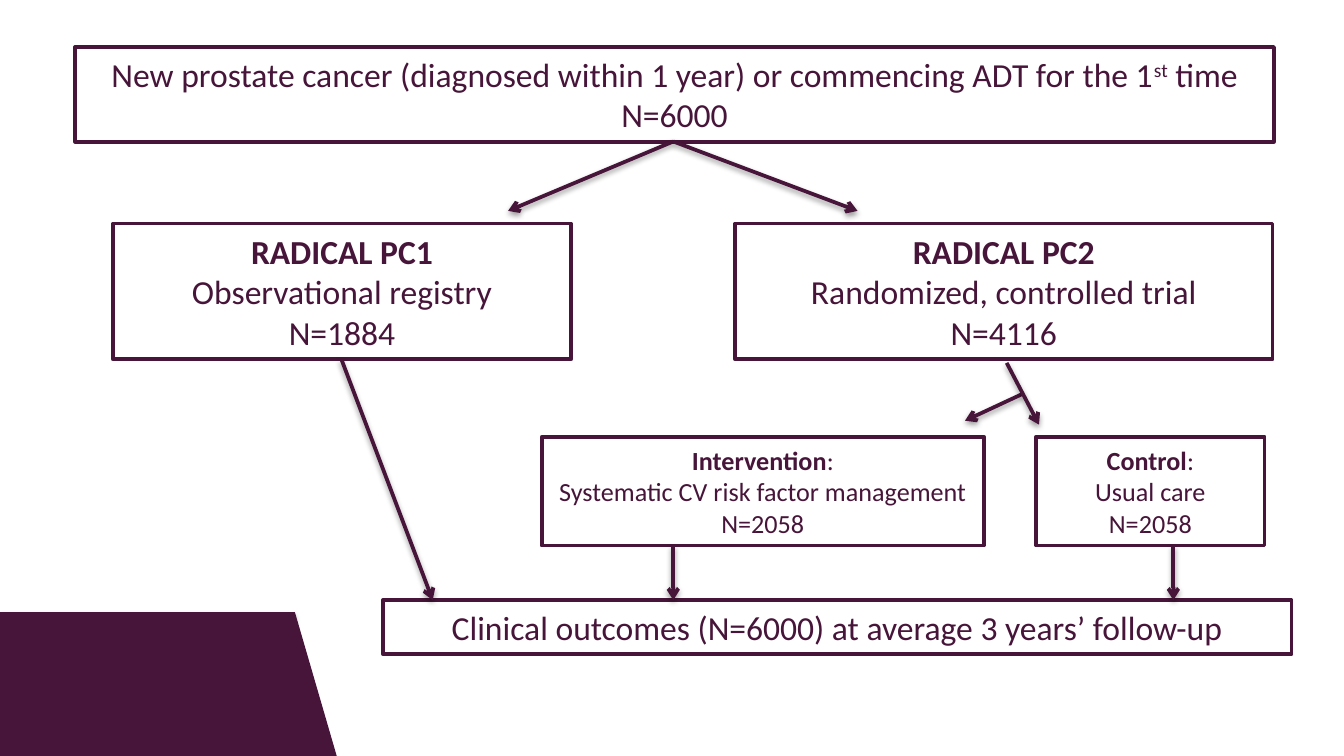
from dataclasses import dataclass

from lxml import etree
from pptx import Presentation
from pptx import util as u
from pptx.dml.color import RGBColor
from pptx.enum import shapes, text
from pptx.oxml import ns

PLUM = RGBColor(0x47, 0x15, 0x39)
WHITE = RGBColor(0xFF, 0xFF, 0xFF)
FONT = "Calibri"


@dataclass
class Run:
    text: str
    bold: bool = False
    raised: bool = False


@dataclass
class Box:
    left: float
    top: float
    width: float
    height: float
    size: int
    lines: list[list[Run]]


@dataclass
class Arrow:
    x1: float
    y1: float
    x2: float
    y2: float


def add_shade(shape, dist: float, alpha: int) -> None:
    """Give a shape a soft shadow that falls straight down."""
    props = shape._element.spPr
    for old in props.findall(ns.qn("a:effectLst")):
        props.remove(old)
    effects = etree.SubElement(props, ns.qn("a:effectLst"))
    shade = etree.SubElement(
        effects, ns.qn("a:outerShdw"), blurRad=str(u.Pt(3.1)),
        dist=str(u.Pt(dist)), dir="5400000", rotWithShape="0")
    black = etree.SubElement(shade, ns.qn("a:srgbClr"), val="000000")
    etree.SubElement(black, ns.qn("a:alpha"), val=str(alpha * 1000))


def add_block(slide, kind, left: float, top: float, width: float,
              height: float, fill: RGBColor, weight: float):
    block = slide.shapes.add_shape(
        kind, u.Pt(left), u.Pt(top), u.Pt(width), u.Pt(height))
    block.shadow.inherit = False
    block.fill.solid()
    block.fill.fore_color.rgb = fill
    block.line.color.rgb = PLUM
    block.line.width = u.Pt(weight)
    return block


def add_box(slide, box: Box) -> None:
    block = add_block(slide, shapes.MSO_SHAPE.RECTANGLE, box.left, box.top,
                      box.width, box.height, WHITE, 2)
    frame = block.text_frame
    frame.word_wrap = True
    frame.vertical_anchor = text.MSO_ANCHOR.MIDDLE
    for i, line in enumerate(box.lines):
        para = frame.paragraphs[0] if i == 0 else frame.add_paragraph()
        para.alignment = text.PP_ALIGN.CENTER
        for part in line:
            run = para.add_run()
            run.text = part.text
            run.font.name = FONT
            run.font.size = u.Pt(box.size)
            run.font.bold = part.bold
            run.font.color.rgb = PLUM
            if part.raised:
                run.font._element.set("baseline", "30000")


def add_arrow(slide, arrow: Arrow) -> None:
    line = slide.shapes.add_connector(
        shapes.MSO_CONNECTOR.STRAIGHT, u.Pt(arrow.x1), u.Pt(arrow.y1),
        u.Pt(arrow.x2), u.Pt(arrow.y2))
    line.line.color.rgb = PLUM
    line.line.width = u.Pt(2)
    etree.SubElement(line.line._get_or_add_ln(), ns.qn("a:tailEnd"),
                     type="arrow")
    add_shade(line, 1.6, 38)


def arm(name: str, mark: str, about: str, count: str) -> list[list[Run]]:
    """Bold name, then what the group is, then its size."""
    head = [Run(name, bold=True)]
    if mark:
        head.append(Run(mark))
    return [head, [Run(about)], [Run(count)]]


# Rows and centre lines shared by boxes and arrows
START_X, START_Y = 360.7, 75.8
GROUP_Y, GROUP_H = 119.8, 72.7
ARM_Y, ARM_H = 234, 58.3
END_Y = 321.5

BOXES = [
    Box(40.3, 25.2, 642.2, 50.8, 18, [
        [Run("New prostate cancer (diagnosed within 1 year) or commencing "
             "ADT for the 1"), Run("st", raised=True), Run(" time")],
        [Run("N=6000")]]),
    Box(60.5, GROUP_Y, 245.5, GROUP_H, 18,
        arm("RADICAL PC1", "", "Observational registry", "N=1884")),
    Box(393.8, GROUP_Y, 288, GROUP_H, 18,
        arm("RADICAL PC2", "", "Randomized, controlled trial", "N=4116")),
    Box(290.2, ARM_Y, 236.9, ARM_H, 14,
        arm("Intervention", ":", "Systematic CV risk factor management",
            "N=2058")),
    Box(555.1, ARM_Y, 122.4, ARM_H, 14,
        arm("Control", ":", "Usual care", "N=2058")),
    Box(205.2, END_Y, 486.7, 29, 18, [
        [Run("Clinical outcomes (N=6000) at average 3 years’ follow-up")]]),
]

ARROWS = [
    *[Arrow(START_X, START_Y, x, 113) for x in (272.2, 459.4)],
    Arrow(182.9, GROUP_Y + GROUP_H, 231.8, END_Y),
    Arrow(547.9, 211, 517, 225.4),
    Arrow(539.3, 194.4, 556.6, 227.5),
    *[Arrow(x, ARM_Y + ARM_H, x, END_Y) for x in (START_X, 628.6)],
]


def main() -> None:
    deck = Presentation()
    deck.slide_width, deck.slide_height = u.Pt(720), u.Pt(405)
    slide = deck.slides.add_slide(deck.slide_layouts[6])

    # Corner wedge
    top, high, edge = 328.3, 76.7, 157.7
    base = add_block(slide, shapes.MSO_SHAPE.RECTANGLE, 0, top, edge, high,
                     PLUM, 0.75)
    add_shade(base, 1.8, 35)
    add_block(slide, shapes.MSO_SHAPE.RIGHT_TRIANGLE, edge, top, 22.3, high,
              PLUM, 0.75)

    # Flow chart
    for box in BOXES:
        add_box(slide, box)
    for arrow in ARROWS:
        add_arrow(slide, arrow)

    deck.save("out.pptx")


if __name__ == "__main__":
    main()
